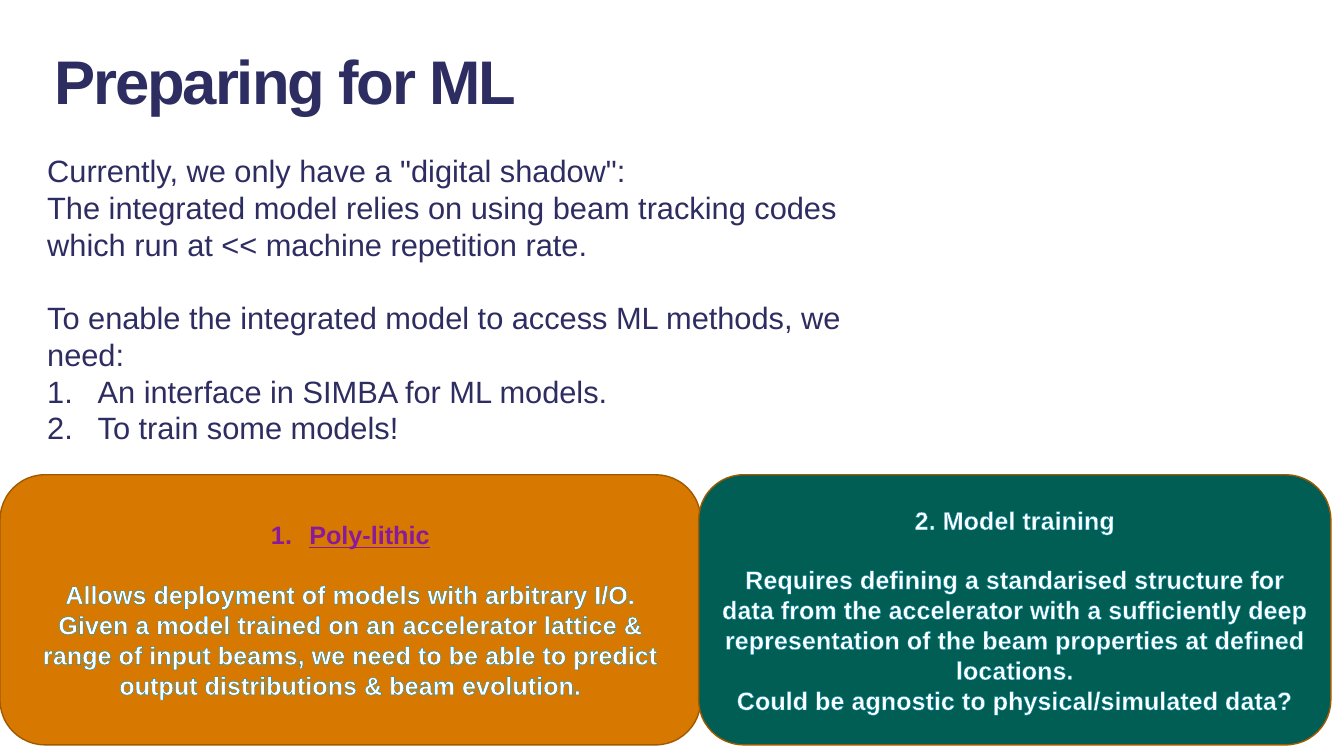
from dataclasses import dataclass

from lxml.etree import SubElement
from pptx import Presentation
from pptx.dml.color import RGBColor
from pptx.enum.shapes import MSO_SHAPE
from pptx.enum.text import MSO_ANCHOR, MSO_AUTO_SIZE, PP_ALIGN
from pptx.oxml.ns import qn
from pptx.slide import Slide
from pptx.text.text import TextFrame
from pptx.util import Inches, Pt


@dataclass(frozen=True)
class Theme:
    font: str = "Arial"
    navy: str = "2E2D62"
    orange: str = "D77900"
    green: str = "005E54"
    border: str = "9F5A00"
    purple: str = "8A1A9B"
    white: str = "FFFFFF"
    glow: str = "008AAD"
    title_size: float = 44
    body_size: float = 22
    panel_size: float = 18
    line_spacing: float = 1.15


THEME = Theme()


@dataclass(frozen=True)
class Style:
    size: float
    color: str
    bold: bool = False
    underline: bool = False
    tracking: float = 0
    outline: float = 0
    align: PP_ALIGN = PP_ALIGN.LEFT


@dataclass(frozen=True)
class Line:
    text: str
    style: Style
    gap_before: bool = False
    number_indent: float = 0


@dataclass(frozen=True)
class Block:
    left: float
    top: float
    width: float
    height: float
    lines: tuple[Line, ...]
    fill: str = ""


TITLE = Style(THEME.title_size, THEME.navy, bold=True, tracking=-1.5)
BODY = Style(THEME.body_size, THEME.navy)
PANEL = Style(THEME.panel_size, THEME.white, bold=True, outline=0.8, align=PP_ALIGN.CENTER)
LINK = Style(THEME.panel_size, THEME.purple, bold=True, underline=True, align=PP_ALIGN.CENTER)

PANEL_TOP, PANEL_HEIGHT = 4.71, 2.68

BLOCKS = (
    Block(0.44, 0.38, 12.78, 0.84, (Line("Preparing for ML", TITLE),)),
    Block(0.37, 1.46, 8.25, 3.06, (
        Line('Currently, we only have a "digital shadow":', BODY),
        Line("The integrated model relies on using beam tracking codes which run at "
             "<< machine repetition rate.", BODY),
        Line("To enable the integrated model to access ML methods, we need:", BODY,
             gap_before=True),
        Line("An interface in SIMBA for ML models.", BODY, number_indent=0.5),
        Line("To train some models!", BODY, number_indent=0.5),
    )),
    Block(0, PANEL_TOP, 6.95, PANEL_HEIGHT, (
        Line("Poly-lithic", LINK, number_indent=0.38),
        Line("Allows deployment of models with arbitrary I/O.", PANEL, gap_before=True),
        Line("Given a model trained on an accelerator lattice & range of input beams, "
             "we need to be able to predict output distributions & beam evolution.", PANEL),
    ), THEME.orange),
    Block(6.93, PANEL_TOP, 6.27, PANEL_HEIGHT, (
        Line("2. Model training", PANEL),
        Line("Requires defining a standarised structure for data from the accelerator with "
             "a sufficiently deep representation of the beam properties at defined "
             "locations.", PANEL, gap_before=True),
        Line("Could be agnostic to physical/simulated data?", PANEL),
    ), THEME.green),
)


def apply_format(target: object, values: dict[str, object]) -> None:
    for name, value in values.items():
        setattr(target, name, value)


def write_lines(frame: TextFrame, lines: tuple[Line, ...]) -> None:
    for index, line in enumerate(lines):
        style = line.style
        para = frame.add_paragraph() if index else frame.paragraphs[0]
        gap = style.size * THEME.line_spacing if line.gap_before else 0
        apply_format(para, {"alignment": style.align, "space_before": Pt(gap)})
        if line.number_indent:
            properties = para._p.get_or_add_pPr()
            indent = Inches(line.number_indent)
            properties.set("marL", str(indent))
            properties.set("indent", str(-indent))
            SubElement(properties, qn("a:buFont"), typeface=THEME.font)
            SubElement(properties, qn("a:buAutoNum"), type="arabicPeriod")
        span = para.add_run()
        span.text = line.text
        apply_format(span.font, {
            "name": THEME.font,
            "size": Pt(style.size),
            "bold": style.bold,
            "underline": style.underline,
        })
        span.font.color.rgb = RGBColor.from_string(style.color)
        properties = span._r.get_or_add_rPr()
        if style.tracking:
            properties.set("spc", str(round(style.tracking * 100)))
        if style.outline:
            edge = SubElement(properties, qn("a:ln"), w=str(Pt(style.outline)))
            paint = SubElement(edge, qn("a:solidFill"))
            SubElement(paint, qn("a:srgbClr"), val=THEME.glow)
            properties.insert(0, edge)


def draw_block(page: Slide, block: Block) -> None:
    bounds = [Inches(value) for value in (block.left, block.top, block.width, block.height)]
    if block.fill:
        box = page.shapes.add_shape(MSO_SHAPE.ROUNDED_RECTANGLE, *bounds)
        box.shadow.inherit = False
        box.fill.solid()
        box.fill.fore_color.rgb = RGBColor.from_string(block.fill)
        box.line.color.rgb = RGBColor.from_string(THEME.border)
        box.line.width = Pt(1)
        layout = {"word_wrap": True, "vertical_anchor": MSO_ANCHOR.MIDDLE}
    else:
        box = page.shapes.add_textbox(*bounds)
        layout = {"word_wrap": True, "auto_size": MSO_AUTO_SIZE.SHAPE_TO_FIT_TEXT}
    apply_format(box.text_frame, layout)
    write_lines(box.text_frame, block.lines)


def main() -> None:
    deck = Presentation()
    apply_format(deck, {"slide_width": Inches(13.33), "slide_height": Inches(7.5)})
    page = deck.slides.add_slide(deck.slide_layouts[6])
    for block in BLOCKS:
        draw_block(page, block)
    deck.save("out.pptx")


if __name__ == "__main__":
    main()
